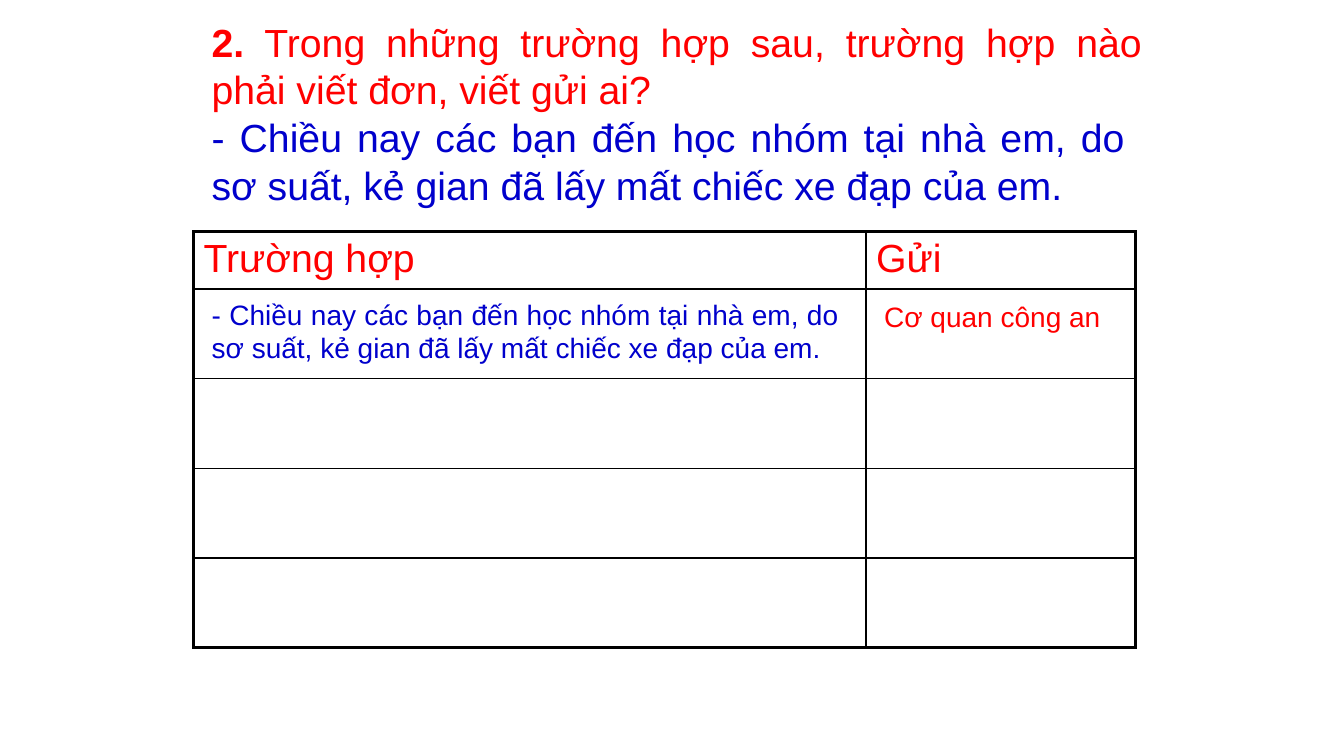
from lxml.etree import SubElement
from pptx import Presentation
from pptx.dml.color import RGBColor
from pptx.enum.text import MSO_AUTO_SIZE, PP_ALIGN
from pptx.oxml.ns import qn
from pptx.util import Inches, Pt

# Content
RED, BLUE, BLACK = "FF0000", "0000CC", "000000"
CASE = ("- Chiều nay các bạn đến học nhóm tại nhà em, do sơ suất, "
        "kẻ gian đã lấy mất chiếc xe đạp của em.")
ASK = " Trong những trường hợp sau, trường hợp nào phải viết đơn, viết gửi ai?"
HEADS = ["Trường hợp", "Gửi"]
COLS = [6.67, 2.67]
ROWS = [0.56] + [0.89] * 4
GRID = (1.92, 2.3)
THIN, THICK = 1, 2.25

# Box, size, colour, alignment, runs as (text, bold)
TASK = [
    ((2, 0.13, 9.42, 1.03), 28, RED, PP_ALIGN.JUSTIFY, [("2.", True), (ASK, False)]),
    ((2, 1.08, 9.25, 1.03), 28, BLUE, PP_ALIGN.JUSTIFY, [(CASE, False)]),
]
ANSWER = [
    ((2, 2.9, 6.42, 0.77), 20, BLUE, PP_ALIGN.JUSTIFY, [(CASE, False)]),
    ((8.67, 2.92, 2.5, 0.43), 20, RED, PP_ALIGN.LEFT, [("Cơ quan công an", False)]),
]


def paint(color, tone):
    color.rgb = RGBColor.from_string(tone)


def write(para, text, size, tone, bold=False):
    run = para.add_run()
    run.text = text
    run.font.name = "Arial"
    run.font.size = Pt(size)
    run.font.bold = bold
    paint(run.font.color, tone)


def add_text(slide, box, size, tone, align, runs):
    frame = slide.shapes.add_textbox(*map(Inches, box)).text_frame
    frame.word_wrap = True
    frame.auto_size = MSO_AUTO_SIZE.SHAPE_TO_FIT_TEXT
    para = frame.paragraphs[0]
    para.alignment = align
    for text, bold in runs:
        write(para, text, size, tone, bold)


def add_edge(cell, side, width):
    line = SubElement(cell._tc.get_or_add_tcPr(), qn("a:ln" + side), w=str(Pt(width)))
    fill = SubElement(line, qn("a:solidFill"))
    SubElement(fill, qn("a:srgbClr"), val=BLACK)


def add_grid(slide):
    size = (Inches(sum(COLS)), Inches(sum(ROWS)))
    table = slide.shapes.add_table(len(ROWS), len(COLS), *map(Inches, GRID), *size).table
    table.first_row = table.horz_banding = False
    for col, width in zip(table.columns, COLS):
        col.width = Inches(width)
    for r, high in enumerate(ROWS):
        table.rows[r].height = Inches(high)
        for c in range(len(COLS)):
            cell = table.cell(r, c)
            # Outer edges are thick, inner ones thin
            outer = {"L": c == 0, "R": c == len(COLS) - 1,
                     "T": r == 0, "B": r == len(ROWS) - 1}
            for side, thick in outer.items():
                add_edge(cell, side, THICK if thick else THIN)
            cell.fill.background()
    for c, head in enumerate(HEADS):
        write(table.cell(0, c).text_frame.paragraphs[0], head, 28, RED)


def main():
    deck = Presentation()
    deck.slide_width, deck.slide_height = Inches(13.33), Inches(7.5)
    slide = deck.slides.add_slide(deck.slide_layouts[6])
    # Task above, answers laid over the grid
    for item in TASK:
        add_text(slide, *item)
    add_grid(slide)
    for item in ANSWER:
        add_text(slide, *item)
    deck.save("out.pptx")


if __name__ == "__main__":
    main()
